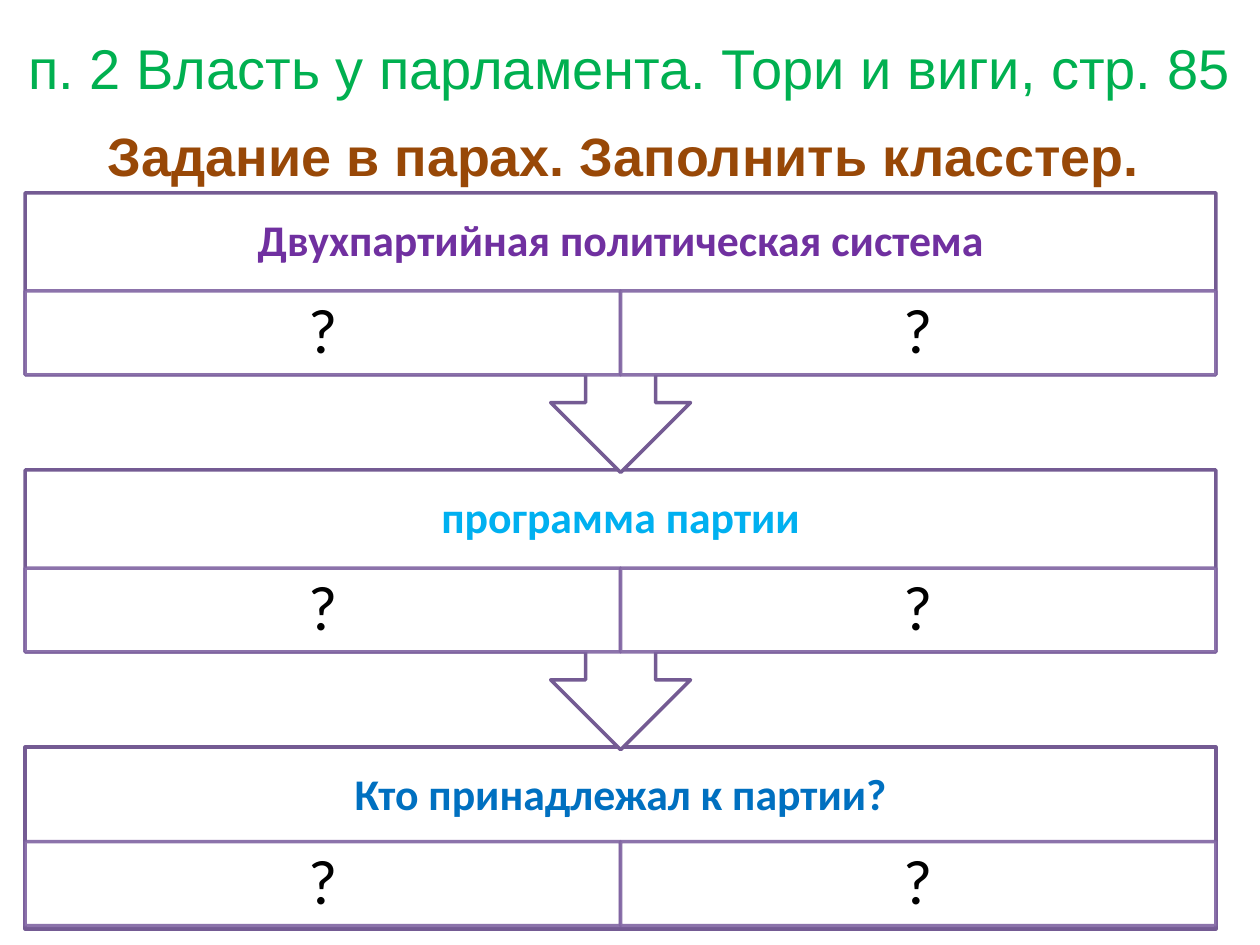
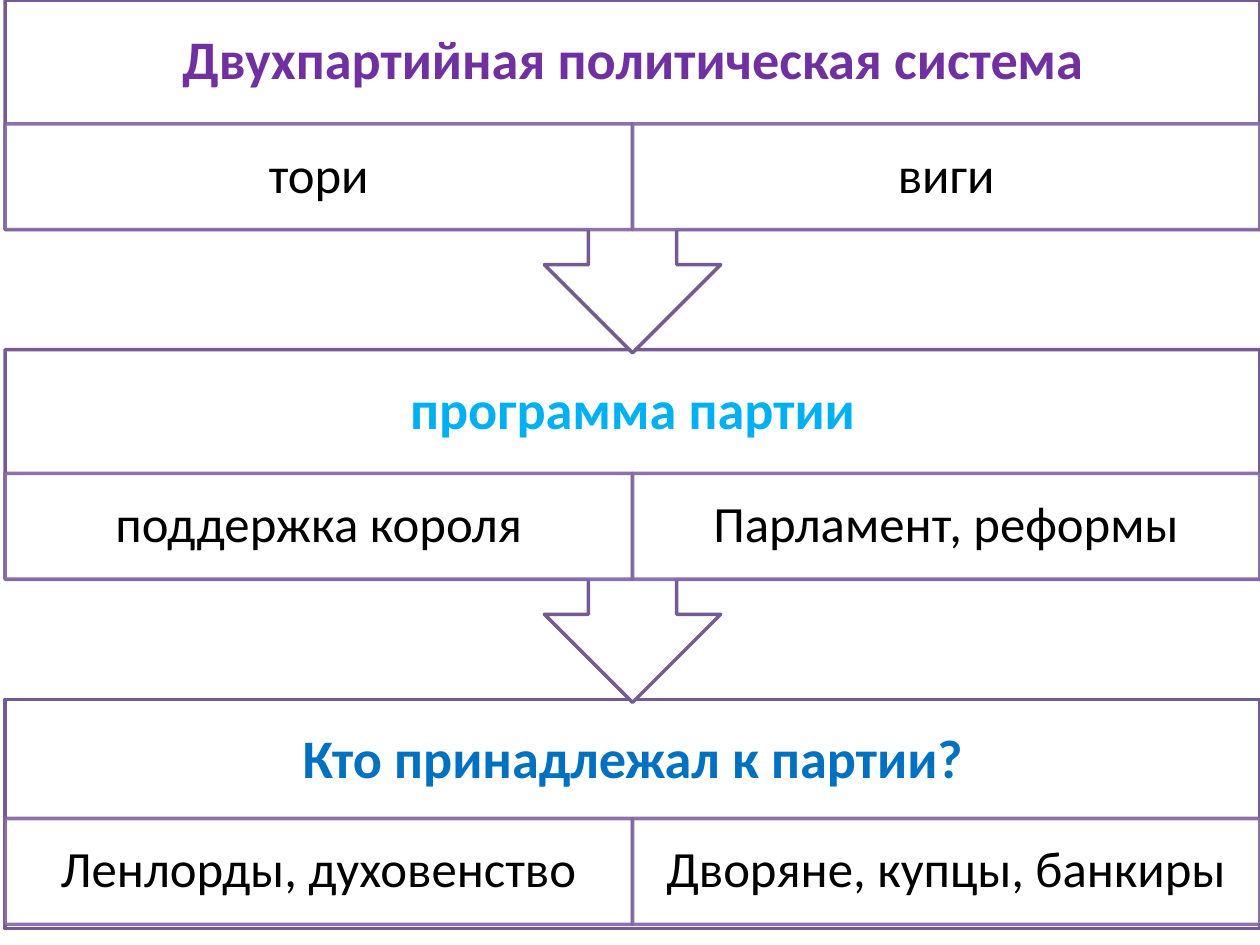
from dataclasses import dataclass

from lxml.etree import SubElement
from pptx import Presentation
from pptx.dml.color import RGBColor
from pptx.enum.shapes import MSO_SHAPE as Kind
from pptx.enum.text import MSO_ANCHOR as Anchor, MSO_AUTO_SIZE as Fit, PP_ALIGN as Align
from pptx.oxml.ns import qn
from pptx.util import Pt

WHITE = RGBColor(0xFF, 0xFF, 0xFF)
BLACK = RGBColor(0, 0, 0)
GREEN = RGBColor(0x00, 0xB0, 0x50)
BROWN = RGBColor(0x98, 0x48, 0x07)
PURPLE = RGBColor(0x70, 0x30, 0xA0)
SKY = RGBColor(0x00, 0xB0, 0xF0)
BLUE = RGBColor(0x00, 0x70, 0xC0)
FRAME = RGBColor(0x74, 0x5B, 0x93)
EDGE = RGBColor(0x80, 0x64, 0xA2)

HEADS = (
    ("Двухпартийная политическая система", PURPLE),
    ("программа партии", SKY),
    ("Кто принадлежал к партии?", BLUE),
)
BODY_PART = 0.65
HEAD_PART = 0.351
CELL_PART = 0.3
LAST_PART = 0.338


@dataclass
class Box:
    left: float
    top: float
    width: float
    height: float

    def spots(self) -> list:
        return [Pt(n) for n in (self.left, self.top, self.width, self.height)]


@dataclass
class Chain:
    left: float
    top: float
    width: float
    tall: float
    step: float
    head_size: float
    head_pad: float
    cell_size: float
    cell_pad: float
    pairs: tuple


def apply(target, looks: dict) -> None:
    for key, value in looks.items():
        setattr(target, key, value)


def write(shape, text: str, font: dict, pad: tuple, line: float = 0.9,
          anchor=Anchor.MIDDLE) -> None:
    frame = shape.text_frame
    side, edge = map(Pt, pad)
    apply(frame, dict(text=text, word_wrap=True, auto_size=Fit.NONE,
                      vertical_anchor=anchor, margin_left=side, margin_right=side,
                      margin_top=edge, margin_bottom=edge))
    para = frame.paragraphs[0]
    apply(para, dict(alignment=Align.CENTER, line_spacing=line, space_before=Pt(0)))
    run = para.runs[0].font
    run.color.rgb = font["tint"]
    apply(run, dict(name=font["name"], size=Pt(font["size"]), bold=font["bold"]))


def draw(slide, kind, box: Box, tint: RGBColor):
    shape = slide.shapes.add_shape(kind, *box.spots())
    shape.shadow.inherit = False
    shape.fill.solid()
    shape.fill.fore_color.rgb = WHITE
    shape.line.color.rgb = tint
    shape.line.width = Pt(2)
    return shape


def fade(shape, share: int) -> None:
    for color in list(shape._element.spPr.iter(qn("a:srgbClr"))):
        SubElement(color, qn("a:alpha")).set("val", str(share * 1000))


def add_step(slide, chain: Chain, rank: int) -> None:
    top = chain.top + rank * chain.step
    last = rank == len(HEADS) - 1
    tall = chain.tall * (BODY_PART if last else 1)
    block = draw(slide, Kind.RECTANGLE if last else Kind.UP_ARROW_CALLOUT,
                 Box(chain.left, top, chain.width, tall), FRAME)
    block.rotation = 0 if last else 180

    text, tint = HEADS[rank]
    head = Box(chain.left, top, chain.width, chain.tall * HEAD_PART)
    write(slide.shapes.add_textbox(*head.spots()), text,
          dict(name="Calibri", size=chain.head_size, bold=True, tint=tint),
          (chain.head_pad, chain.head_pad))

    half = chain.width / 2
    low = top + chain.tall * (LAST_PART if last else HEAD_PART)
    for col, word in enumerate(chain.pairs[rank]):
        cell = draw(slide, Kind.RECTANGLE,
                    Box(chain.left + col * half, low, half, chain.tall * CELL_PART), EDGE)
        fade(cell, 90)
        write(cell, word,
              dict(name="Calibri", size=chain.cell_size, bold=False, tint=BLACK),
              (chain.cell_pad, 3))


def add_chain(slide, chain: Chain) -> None:
    for rank in reversed(range(len(HEADS))):
        add_step(slide, chain, rank)


def place(shape, box: Box) -> None:
    apply(shape, dict(zip(("left", "top", "width", "height"), box.spots())))


def add_task(deck) -> None:
    slide = deck.slides.add_slide(deck.slide_layouts[1])
    title, body = slide.placeholders
    place(title, Box(8.64, 21.6, 702.72, 33.12))
    write(title, "п. 2 Власть у парламента. Тори и виги, стр. 85",
          dict(name="Arial", size=32, bold=False, tint=GREEN), (0, 3.6), 1.0)
    place(body, Box(8.64, 66.24, 695.52, 39.6))
    write(body, "Задание в парах. Заполнить класстер.",
          dict(name="Arial", size=30.8, bold=True, tint=BROWN), (7.2, 3.6), 1.0, Anchor.TOP)
    props = body.text_frame.paragraphs[0]._p.get_or_add_pPr()
    SubElement(props, qn("a:buNone"))
    for key in ("marL", "indent"):
        props.set(key, "0")
    add_chain(slide, Chain(14.4, 110.16, 680.4, 159.84, 158.4, 25, 13.7, 36, 20,
                           (("?", "?"),) * 3))


def add_answer(deck) -> None:
    slide = deck.slides.add_slide(deck.slide_layouts[6])
    add_chain(slide, Chain(2.88, 0, 717.12, 201.6, 199.8, 31, 17.3, 29, 16.5, (
        ("тори", "виги"),
        ("поддержка короля", "Парламент, реформы"),
        ("Ленлорды, духовенство", "Дворяне, купцы, банкиры"),
    )))


def main() -> None:
    deck = Presentation()
    apply(deck, dict(slide_width=Pt(720), slide_height=Pt(540)))
    add_task(deck)
    add_answer(deck)
    deck.save("out.pptx")


if __name__ == "__main__":
    main()
